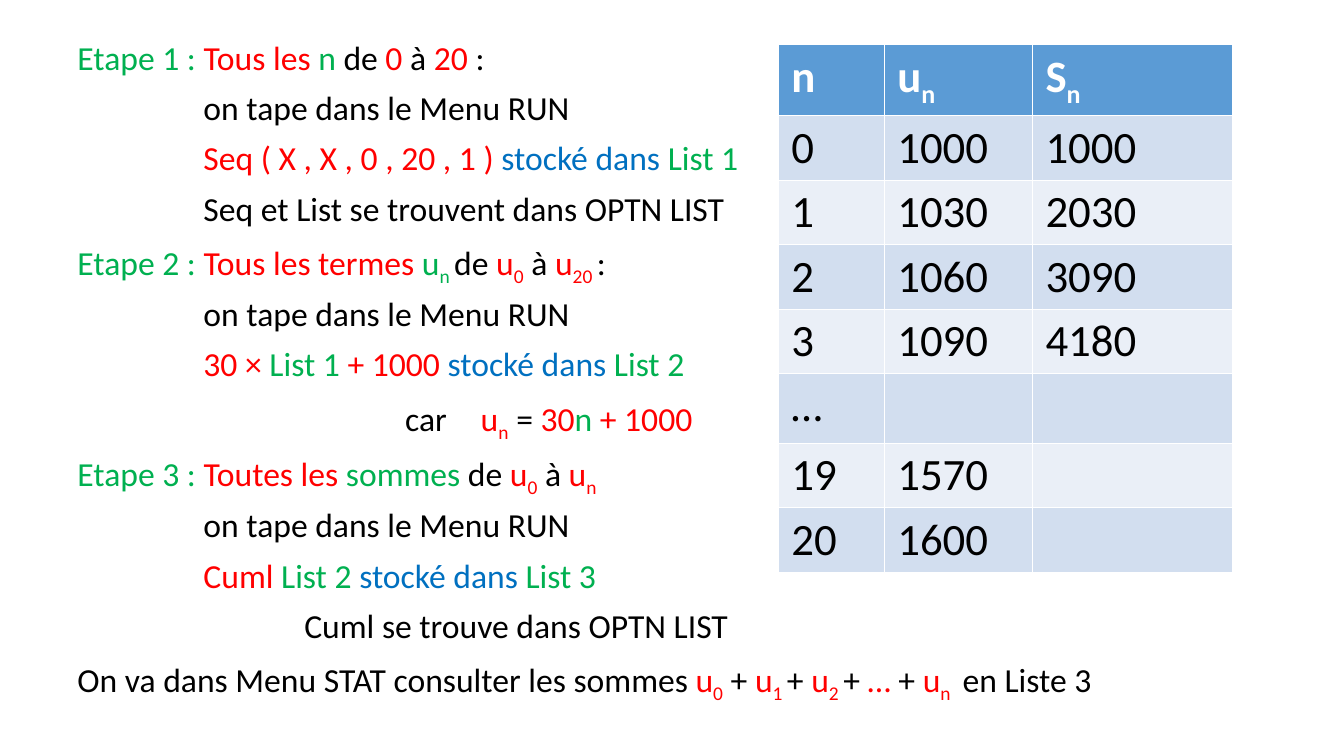
from pptx import Presentation
from pptx.dml.color import RGBColor
from pptx.enum.text import MSO_ANCHOR
from pptx.oxml.ns import qn
from pptx.util import Inches, Pt
from lxml.etree import SubElement

BLACK = RGBColor(0x00, 0x00, 0x00)
WHITE = RGBColor(0xFF, 0xFF, 0xFF)
RED = RGBColor(0xFF, 0x00, 0x00)
GREEN = RGBColor(0x00, 0xB0, 0x50)
BLUE = RGBColor(0x00, 0x70, 0xC0)
HEADER_FILL = RGBColor(0x5B, 0x9B, 0xD5)
BAND_FILLS = RGBColor(0xEA, 0xEF, 0xF7), RGBColor(0xD2, 0xDE, 0xEF)

# Indents of the explanations, in inches
STEP, DETAIL, REMARK, REASON = 0, 1.25, 2.25, 3.25
FORMULA_TAB = 4.04

RUN_MENU = (DETAIL, [("on tape dans le Menu RUN", BLACK)])

# An underscore starts the subscript of a term
EXPLANATIONS = [
    (STEP, [("Etape 1 : ", GREEN), ("Tous les ", RED), ("n ", GREEN), ("de", BLACK),
            (" 0 ", RED), ("à", BLACK), (" 20 ", RED), (":", BLACK)]),
    RUN_MENU,
    (DETAIL, [("Seq ( X , X , 0 , 20 , 1 ) ", RED), ("stocké dans ", BLUE), ("List 1", GREEN)]),
    (DETAIL, [("Seq et List se trouvent dans OPTN LIST", BLACK)]),
    (STEP, [("Etape 2 : ", GREEN), ("Tous les termes ", RED), ("u_n ", GREEN), ("de", BLACK),
            (" u_0", RED), (" à ", BLACK), ("u_20 ", RED), (":", BLACK)]),
    RUN_MENU,
    (DETAIL, [("30 × ", RED), ("List 1 ", GREEN), ("+ 1000 ", RED),
              ("stocké dans ", BLUE), ("List 2", GREEN)]),
    (REASON, [("car\t", BLACK), ("u_n", RED), (" = ", BLACK), ("30", RED),
              ("n", GREEN), (" + 1000", RED)]),
    (STEP, [("Etape 3 : ", GREEN), ("Toutes les ", RED), ("sommes ", GREEN), ("de", BLACK),
            (" u_0", RED), (" à ", BLACK), ("u_n", RED)]),
    RUN_MENU,
    (DETAIL, [("Cuml ", RED), ("List 2 ", GREEN), ("stocké dans ", BLUE), ("List 3", GREEN)]),
    (REMARK, [("Cuml se trouve dans OPTN LIST", BLACK)]),
    (STEP, [("On va dans Menu STAT consulter les sommes ", BLACK), ("u_0", RED), (" + ", BLACK),
            ("u_1 ", RED), ("+ ", BLACK), ("u_2 ", RED), ("+ ", BLACK), ("… ", RED),
            ("+ ", BLACK), ("u_n ", RED), (" en Liste 3", BLACK)]),
]

TERMS = [
    ("n", "u_n", "S_n"),
    ("0", "1000", "1000"),
    ("1", "1030", "2030"),
    ("2", "1060", "3090"),
    ("3", "1090", "4180"),
    ("…", "", ""),
    ("19", "1570", ""),
    ("20", "1600", ""),
]
COLUMN_WIDTHS = 1.05, 1.47, 1.99
ROW_HEIGHT, TALL_ROW_HEIGHT = 0.64, 0.69


def add_term(paragraph, term, size, colour, bold=False):
    """Append a term, lowering whatever follows its underscore."""
    base, _, index = term.partition("_")
    for part, lowered in ((base, False), (index, True)):
        if not part:
            continue
        run = paragraph.add_run()
        run.text = part
        run.font.name = "Calibri"
        run.font.size = Pt(size)
        run.font.bold = bold
        run.font.color.rgb = colour
        if lowered:
            run._r.get_or_add_rPr().set("baseline", "-25000")


deck = Presentation()
deck.slide_width, deck.slide_height = Inches(13.33), Inches(7.5)
slide = deck.slides.add_slide(deck.slide_layouts[6])

# Steps on the calculator
steps = slide.shapes.add_textbox(Inches(0.67), Inches(0.36), Inches(12), Inches(7.14)).text_frame
steps.word_wrap = True
for position, (indent, terms) in enumerate(EXPLANATIONS):
    line = steps.add_paragraph() if position else steps.paragraphs[0]
    line.line_spacing = 0.9
    line.space_before = Pt(10)
    properties = line._p.get_or_add_pPr()
    properties.set("marL", "0")
    properties.set("indent", str(Inches(indent)))
    if indent == REASON:
        stops = SubElement(properties, qn("a:tabLst"))
        SubElement(stops, qn("a:tab"), pos=str(Inches(FORMULA_TAB)), algn="l")
    for term, colour in terms:
        add_term(line, term, 24, colour)

# Terms and sums of the sequence
sequence = slide.shapes.add_table(
    len(TERMS), len(COLUMN_WIDTHS), Inches(7.72), Inches(0.44),
    Inches(sum(COLUMN_WIDTHS)), Inches(ROW_HEIGHT * len(TERMS))).table
for column, width in zip(sequence.columns, COLUMN_WIDTHS):
    column.width = Inches(width)
for rank, terms in enumerate(TERMS):
    is_header = rank == 0
    is_tall = is_header or terms[0] == "…"
    sequence.rows[rank].height = Inches(TALL_ROW_HEIGHT if is_tall else ROW_HEIGHT)
    for place, term in enumerate(terms):
        cell = sequence.cell(rank, place)
        cell.fill.solid()
        cell.fill.fore_color.rgb = HEADER_FILL if is_header else BAND_FILLS[rank % 2]
        cell.margin_left = cell.margin_right = Inches(0.13)
        cell.vertical_anchor = MSO_ANCHOR.TOP
        add_term(cell.text_frame.paragraphs[0], term, 32,
                 WHITE if is_header else BLACK, bold=is_header)

deck.save("out.pptx")
